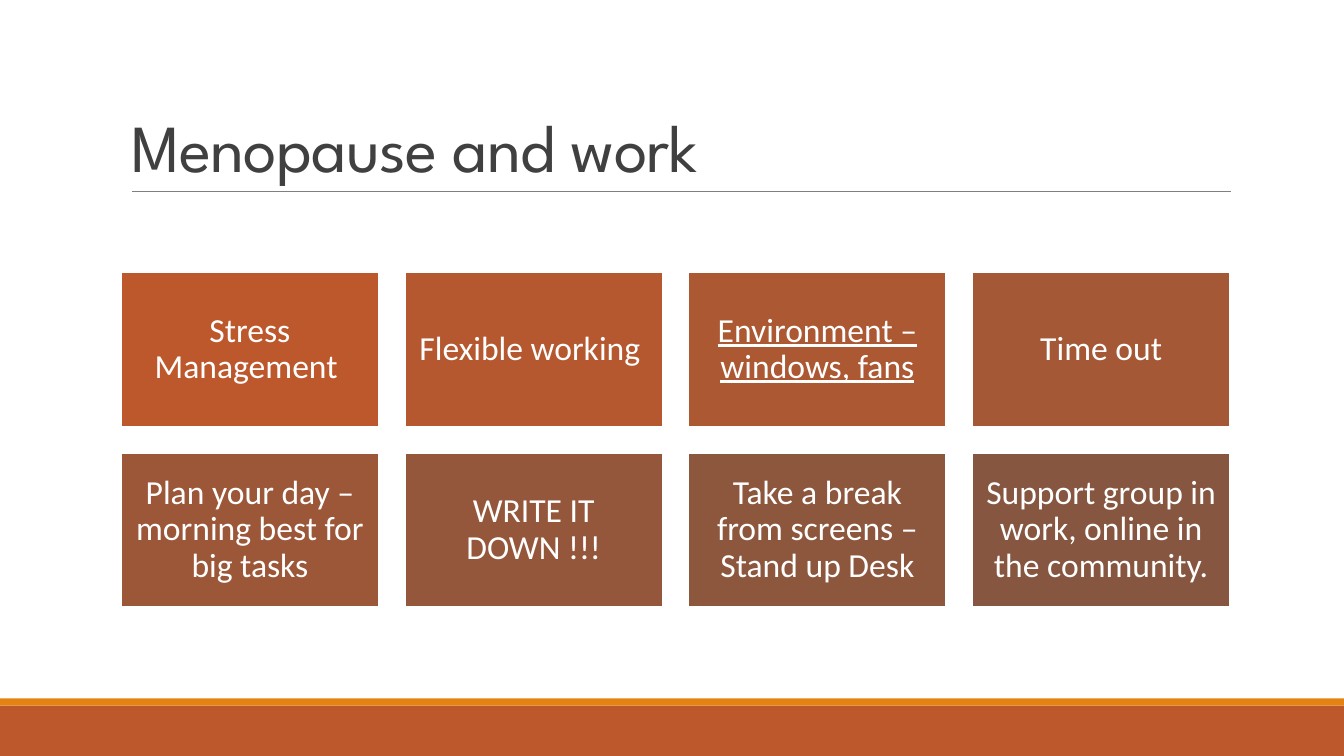
from dataclasses import dataclass

from lxml import etree
from pptx import Presentation
from pptx.dml.color import RGBColor
from pptx.enum.shapes import MSO_CONNECTOR, MSO_SHAPE
from pptx.enum.text import MSO_ANCHOR, MSO_AUTO_SIZE, PP_ALIGN
from pptx.oxml.ns import qn
from pptx.slide import Slide
from pptx.util import Cm, Pt

RECT = MSO_SHAPE.RECTANGLE
LINE = MSO_CONNECTOR.STRAIGHT
MIDDLE, BOTTOM = MSO_ANCHOR.MIDDLE, MSO_ANCHOR.BOTTOM
LEFT, CENTER = PP_ALIGN.LEFT, PP_ALIGN.CENTER
NO_FIT = MSO_AUTO_SIZE.NONE


@dataclass(frozen=True)
class Theme:
    head: str = "League Spartan"
    body: str = "Calibri"
    head_size: float = 48
    body_size: float = 24
    ink: str = "404040"
    white: str = "FFFFFF"
    rule: str = "808080"
    rust: str = "BD582C"
    amber: str = "E48312"


@dataclass(frozen=True)
class Box:
    left: float
    top: float
    width: float
    height: float


@dataclass(frozen=True)
class Card:
    text: str
    fill: str
    under: bool = False


THEME = Theme()
COLS = 4
FIRST = Box(3.05, 6.86, 6.5, 3.89)
STEP_X, STEP_Y = 7.15, 4.55
INSET = Cm(0.25)

BANDS = [
    (Box(0, 17.78, 33.87, 1.27), THEME.rust),
    (Box(0, 17.6, 33.87, 0.18), THEME.amber),
]

CARDS = [
    Card("Stress Management ", "BD582C"),
    Card("Flexible working ", "B5582F"),
    Card("Environment – windows, fans", "AC5833", True),
    Card("Time out", "A45836"),
    Card("Plan your day – morning best for big tasks", "9C5739"),
    Card("WRITE IT DOWN !!!", "95573B"),
    Card("Take a break from screens – Stand up Desk", "8D573E"),
    Card("Support group in work, online in the community.", "865640"),
]


def color(code: str) -> RGBColor:
    return RGBColor.from_string(code)


def draw_rect(slide: Slide, box: Box, fill: str):
    shape = slide.shapes.add_shape(
        RECT, Cm(box.left), Cm(box.top), Cm(box.width), Cm(box.height))
    shape.shadow.inherit = False
    shape.fill.solid()
    shape.fill.fore_color.rgb = color(fill)
    shape.line.fill.background()
    return shape


def draw_rule(slide: Slide) -> None:
    rule = slide.shapes.add_connector(LINE, Cm(3.33), Cm(4.83), Cm(31.01), Cm(4.83))
    rule.line.color.rgb = color(THEME.rule)
    rule.line.width = Pt(0.5)
    etree.SubElement(rule._element.spPr, qn("a:effectLst"))


def draw_title(slide: Slide, text: str) -> None:
    title = slide.shapes.title
    title.left, title.top = Cm(3.05), Cm(0.79)
    title.width, title.height = Cm(27.94), Cm(4.04)
    frame = title.text_frame
    frame.text = text
    frame.word_wrap = True
    frame.auto_size = NO_FIT
    frame.vertical_anchor = BOTTOM
    para = frame.paragraphs[0]
    para.alignment = LEFT
    para.line_spacing = 0.85
    font = para.font
    font.name, font.size = THEME.head, Pt(THEME.head_size)
    font.color.rgb = color(THEME.ink)
    font._element.set("spc", "-50")


def draw_card(slide: Slide, card: Card, index: int) -> None:
    row, col = divmod(index, COLS)
    box = Box(FIRST.left + col * STEP_X, FIRST.top + row * STEP_Y,
              FIRST.width, FIRST.height)
    shape = draw_rect(slide, box, card.fill)
    shape.line.color.rgb = color(THEME.white)
    shape.line.width = Pt(1.25)
    frame = shape.text_frame
    frame.text = card.text
    frame.word_wrap = True
    frame.vertical_anchor = MIDDLE
    frame.margin_left = frame.margin_right = INSET
    frame.margin_top = frame.margin_bottom = INSET
    para = frame.paragraphs[0]
    para.alignment = CENTER
    para.line_spacing = 0.9
    font = para.font
    font.name, font.size = THEME.body, Pt(THEME.body_size)
    font.color.rgb = color(THEME.white)
    font.underline = card.under


def main() -> None:
    deck = Presentation()
    deck.slide_width, deck.slide_height = Cm(33.87), Cm(19.05)
    slide = deck.slides.add_slide(deck.slide_layouts[5])
    for box, fill in BANDS:
        draw_rect(slide, box, fill)
    draw_rule(slide)
    draw_title(slide, "Menopause and work")
    for index, card in enumerate(CARDS):
        draw_card(slide, card, index)
    deck.save("out.pptx")


if __name__ == "__main__":
    main()
